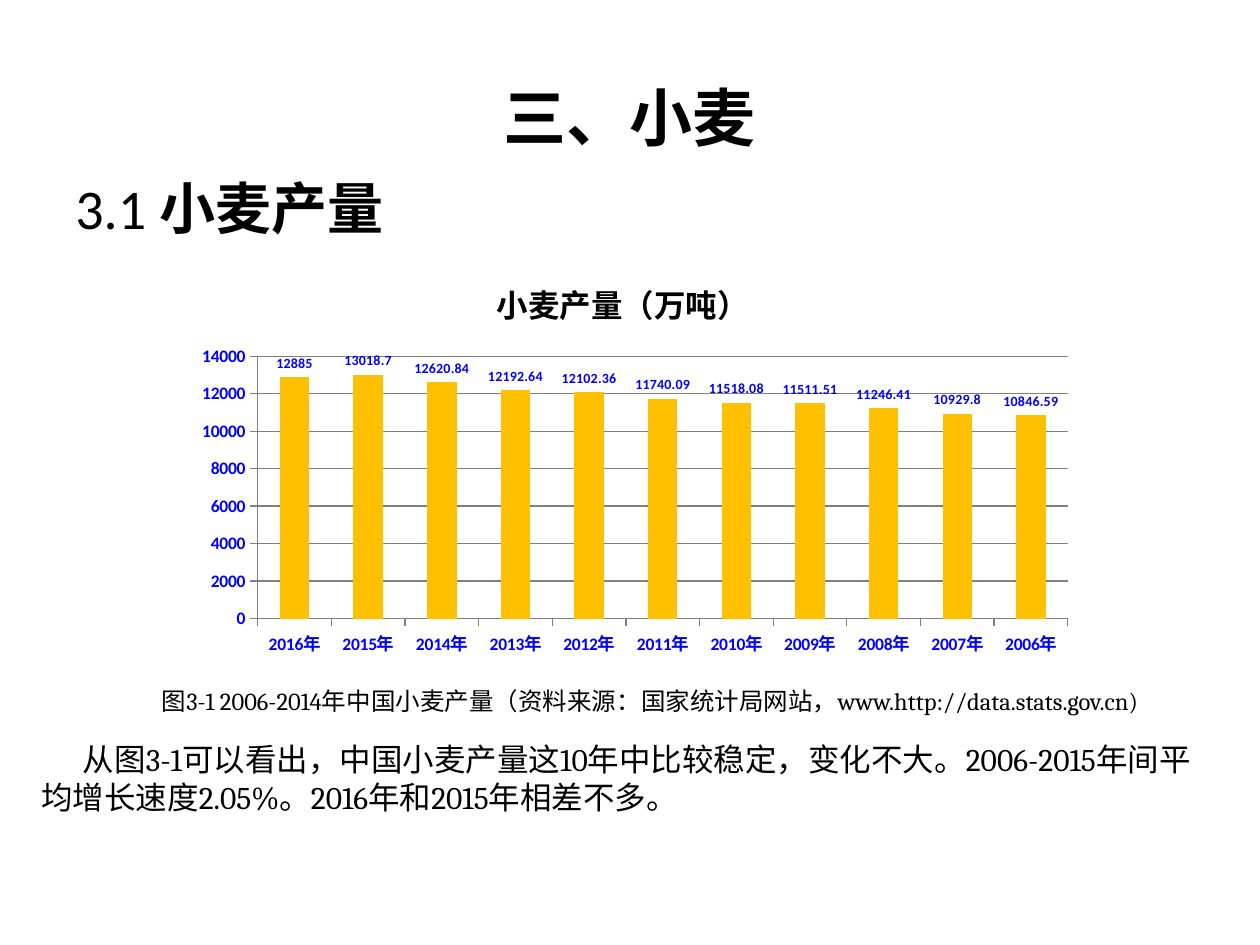
from dataclasses import dataclass

from lxml.etree import SubElement
from pptx import Presentation
from pptx.chart.data import CategoryChartData
from pptx.dml.color import RGBColor
from pptx.enum.chart import XL_CHART_TYPE, XL_LABEL_POSITION, XL_TICK_MARK
from pptx.enum.text import MSO_ANCHOR, PP_ALIGN
from pptx.oxml.ns import qn
from pptx.util import Inches, Pt

SLIDE_WIDTH, SLIDE_HEIGHT = Inches(10), Inches(7.5)
COLORS = {"text": "000000", "label": "0000FF", "line": "808080", "bar": "FFC000"}
CHART_TITLE = "小麦产量（万吨）"
OUTPUT = [12885, 13018.7, 12620.84, 12192.64, 12102.36, 11740.09,
          11518.08, 11511.51, 11246.41, 10929.8, 10846.59]
YEARS = [f"{2016 - i}年" for i in range(len(OUTPUT))]
PLOT_SHARES = {"x": 0.09, "y": 0.23, "w": 0.91, "h": 0.6}


@dataclass(frozen=True)
class Area:
    """Place on the slide, in percent of its width and height."""
    left: float
    top: float
    width: float
    height: float

    def lengths(self) -> tuple[int, int, int, int]:
        return (int(SLIDE_WIDTH * self.left / 100), int(SLIDE_HEIGHT * self.top / 100),
                int(SLIDE_WIDTH * self.width / 100), int(SLIDE_HEIGHT * self.height / 100))


@dataclass(frozen=True)
class Run:
    text: str
    size: float
    font: str = "Calibri"
    bold: bool = False


@dataclass(frozen=True)
class Paragraph:
    runs: tuple[Run, ...]
    align: PP_ALIGN = PP_ALIGN.LEFT
    margin: float = 0
    indent: float = 0
    space_before: float = 0


@dataclass(frozen=True)
class TextBlock:
    area: Area
    anchor: MSO_ANCHOR
    paragraphs: tuple[Paragraph, ...]


TEXT_BLOCKS = (
    TextBlock(Area(5, 4, 90, 16.67), MSO_ANCHOR.MIDDLE, (
        Paragraph((Run("三、小麦", 36, bold=True),), PP_ALIGN.CENTER),
    )),
    TextBlock(Area(5, 17.73, 90, 71.6), MSO_ANCHOR.TOP, (
        Paragraph((Run("3.1 ", 32), Run("小麦产量", 32, bold=True)),
                  margin=0.38, indent=-0.38, space_before=6.4),
    )),
    TextBlock(Area(2.3, 71.87, 95.3, 15.2), MSO_ANCHOR.MIDDLE, (
        Paragraph((Run("图3-1 2006-2014年中国小麦产量（资料来源：国家统计局网站，"
                       "www.http://data.stats.gov.cn)", 14, "Cambria"),),
                  PP_ALIGN.CENTER, indent=0.33),
        Paragraph((Run("从图3-1可以看出，中国小麦产量这10年中比较稳定，变化不大。"
                       "2006-2015年间平均增长速度2.05%。2016年和2015年相差不多。",
                       18, "Cambria"),),
                  indent=0.33, space_before=14),
    )),
)
CHART_AREA = Area(14.1, 27.07, 70.7, 46.27)


def style_font(font, size: float, color: str, bold: bool, name: str = "Calibri") -> None:
    font.name, font.size, font.bold = name, Pt(size), bold
    font.color.rgb = RGBColor.from_string(COLORS[color])


def add_run(paragraph, run: Run) -> None:
    part = paragraph.add_run()
    part.text = run.text
    style_font(part.font, run.size, "text", run.bold, run.font)


def add_text(slide, block: TextBlock) -> None:
    frame = slide.shapes.add_textbox(*block.area.lengths()).text_frame
    frame.word_wrap = True
    frame.vertical_anchor = block.anchor
    for i, content in enumerate(block.paragraphs):
        paragraph = frame.add_paragraph() if i else frame.paragraphs[0]
        paragraph.alignment = content.align
        paragraph.space_before = Pt(content.space_before)
        properties = paragraph._p.get_or_add_pPr()
        properties.set("marL", str(Inches(content.margin)))
        properties.set("indent", str(Inches(content.indent)))
        for run in content.runs:
            add_run(paragraph, run)


def style_line(line) -> None:
    line.color.rgb = RGBColor.from_string(COLORS["line"])
    line.width = Pt(0.75)


def place_plot(chart) -> None:
    """Fix the inner plot area as shares of the chart's size."""
    plot_area = chart._chartSpace.chart.plotArea
    for old_layout in plot_area.findall(qn("c:layout")):
        plot_area.remove(old_layout)
    layout = SubElement(plot_area, qn("c:layout"))
    plot_area.insert(0, layout)
    manual = SubElement(layout, qn("c:manualLayout"))
    settings = {"layoutTarget": "inner", "xMode": "edge", "yMode": "edge", **PLOT_SHARES}
    for tag, value in settings.items():
        SubElement(manual, qn(f"c:{tag}")).set("val", str(value))


def add_output_chart(slide) -> None:
    data = CategoryChartData()
    data.categories = YEARS
    data.add_series(CHART_TITLE, OUTPUT)
    chart = slide.shapes.add_chart(
        XL_CHART_TYPE.COLUMN_CLUSTERED, *CHART_AREA.lengths(), data).chart
    style_font(chart.font, 10, "text", False)
    chart.has_legend = False
    chart.has_title = True
    add_run(chart.chart_title.text_frame.paragraphs[0], Run(CHART_TITLE, 18, bold=True))
    chart.chart_title.include_in_layout = False

    for axis in (chart.category_axis, chart.value_axis):
        axis.major_tick_mark = XL_TICK_MARK.OUTSIDE
        style_font(axis.tick_labels.font, 10, "label", True)
        style_line(axis.format.line)
    scale = chart.value_axis
    scale.minimum_scale, scale.maximum_scale, scale.major_unit = 0, 14000, 2000
    scale.has_major_gridlines = True
    style_line(scale.major_gridlines.format.line)

    plot = chart.plots[0]
    plot.gap_width = 150
    plot.vary_by_categories = False
    bars = plot.series[0]
    bars.format.fill.solid()
    bars.format.fill.fore_color.rgb = RGBColor.from_string(COLORS["bar"])
    labels = bars.data_labels
    labels.show_value = True
    labels.position = XL_LABEL_POSITION.OUTSIDE_END
    style_font(labels.font, 8, "label", True)
    place_plot(chart)


def main() -> None:
    presentation = Presentation()
    presentation.slide_width, presentation.slide_height = SLIDE_WIDTH, SLIDE_HEIGHT
    slide = presentation.slides.add_slide(presentation.slide_layouts[6])
    heading, section, commentary = TEXT_BLOCKS
    add_text(slide, heading)
    add_text(slide, section)
    add_output_chart(slide)
    add_text(slide, commentary)
    presentation.save("out.pptx")


if __name__ == "__main__":
    main()
